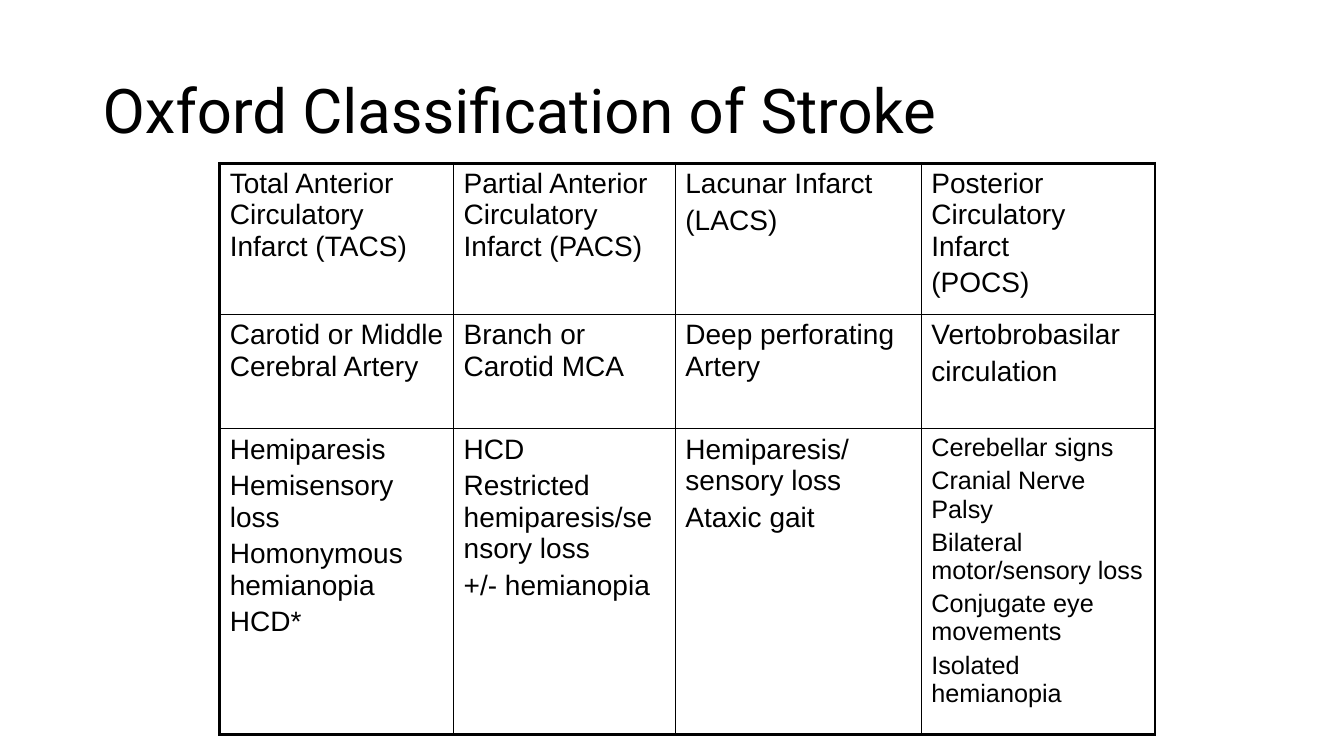
from dataclasses import dataclass
from typing import NamedTuple

from lxml.etree import Element, SubElement
from pptx import Presentation
from pptx.dml.color import RGBColor as RGB
from pptx.enum.text import MSO_ANCHOR as Anchor
from pptx.oxml.ns import qn
from pptx.util import Inches, Pt


@dataclass(frozen=True)
class Theme:
    ink: str = "000000"
    title_font: str = "Roboto"
    body_font: str = "Arial"
    title_size: int = 44
    body_size: int = 20
    small_size: int = 18
    frame: float = 2.25
    rule: float = 1
    gap_share: float = 0.2
    title_spacing: float = 0.9


class Area(NamedTuple):
    left: float
    top: float
    width: float
    height: float


@dataclass(frozen=True)
class Entry:
    lines: tuple[str, ...]
    size: int


THEME = Theme()
WIDTH, HEIGHT = Inches(13.33), Inches(7.5)
TITLE_AREA = Area(6.9, 5.33, 86.27, 19.33)
TABLE_LEFT, TABLE_TOP = 16.35, 21.6
COLUMNS = (17.4, 16.5, 18.3, 17.4)
ROWS = (20, 15.1, 40.5)


def entry(*lines: str, size: int = THEME.body_size) -> Entry:
    return Entry(lines, size)


ENTRIES = (
    (
        entry("Total Anterior Circulatory Infarct (TACS)"),
        entry("Partial Anterior Circulatory Infarct (PACS)"),
        entry("Lacunar Infarct", "(LACS)"),
        entry("Posterior Circulatory Infarct", "(POCS)"),
    ),
    (
        entry("Carotid or Middle Cerebral Artery"),
        entry("Branch or Carotid MCA"),
        entry("Deep perforating Artery"),
        entry("Vertobrobasilar", "circulation"),
    ),
    (
        entry("Hemiparesis", "Hemisensory loss", "Homonymous hemianopia", "HCD*"),
        entry("HCD", "Restricted hemiparesis/sensory loss", "+/- hemianopia"),
        entry("Hemiparesis/sensory loss", "Ataxic gait"),
        entry(
            "Cerebellar signs",
            "Cranial Nerve Palsy",
            "Bilateral motor/sensory loss",
            "Conjugate eye movements",
            "Isolated hemianopia",
            size=THEME.small_size,
        ),
    ),
)


def across(percent: float) -> int:
    return round(WIDTH * percent / 100)


def down(percent: float) -> int:
    return round(HEIGHT * percent / 100)


def style(p, font: str, size: int) -> None:
    for r in p.runs:
        r.font.name = font
        r.font.size = Pt(size)
        r.font.color.rgb = RGB.from_string(THEME.ink)


def add_title(s, area: Area, text: str) -> None:
    sp = s.shapes.add_textbox(
        across(area.left), down(area.top), across(area.width), down(area.height)
    )
    tf = sp.text_frame
    tf.word_wrap = True
    tf.vertical_anchor = Anchor.MIDDLE
    tf.text = text
    p = tf.paragraphs[0]
    p.line_spacing = THEME.title_spacing
    style(p, THEME.title_font, THEME.title_size)


def set_borders(cell, outer: dict[str, bool]) -> None:
    props = cell._tc.get_or_add_tcPr()
    for i, (side, is_outer) in enumerate(outer.items()):
        width = Pt(THEME.frame if is_outer else THEME.rule)
        ln = Element(qn(f"a:ln{side}"), w=str(width))
        fill = SubElement(ln, qn("a:solidFill"))
        SubElement(fill, qn("a:srgbClr"), val=THEME.ink)
        props.insert(i, ln)


def fill_cell(cell, item: Entry) -> None:
    tf = cell.text_frame
    tf.text = "\n".join(item.lines)
    for i, p in enumerate(tf.paragraphs):
        if i:
            p.space_before = Pt(item.size * THEME.gap_share)
        style(p, THEME.body_font, item.size)
    cell.fill.background()


def add_entries(s) -> None:
    table = s.shapes.add_table(
        len(ROWS), len(COLUMNS), across(TABLE_LEFT), down(TABLE_TOP),
        across(sum(COLUMNS)), down(sum(ROWS)),
    ).table
    table.first_row = table.horz_banding = False
    for column, share in zip(table.columns, COLUMNS):
        column.width = across(share)
    last_row, last_column = len(ROWS) - 1, len(COLUMNS) - 1
    for i, (row, share) in enumerate(zip(table.rows, ROWS)):
        row.height = down(share)
        for j, (cell, item) in enumerate(zip(row.cells, ENTRIES[i])):
            fill_cell(cell, item)
            set_borders(cell, {
                "L": j == 0, "R": j == last_column,
                "T": i == 0, "B": i == last_row,
            })


def main() -> None:
    """Build the stroke classification slide."""
    prs = Presentation()
    prs.slide_width, prs.slide_height = WIDTH, HEIGHT
    s = prs.slides.add_slide(prs.slide_layouts[6])
    add_title(s, TITLE_AREA, "Oxford Classification of Stroke")
    add_entries(s)
    prs.save("out.pptx")


if __name__ == "__main__":
    main()
